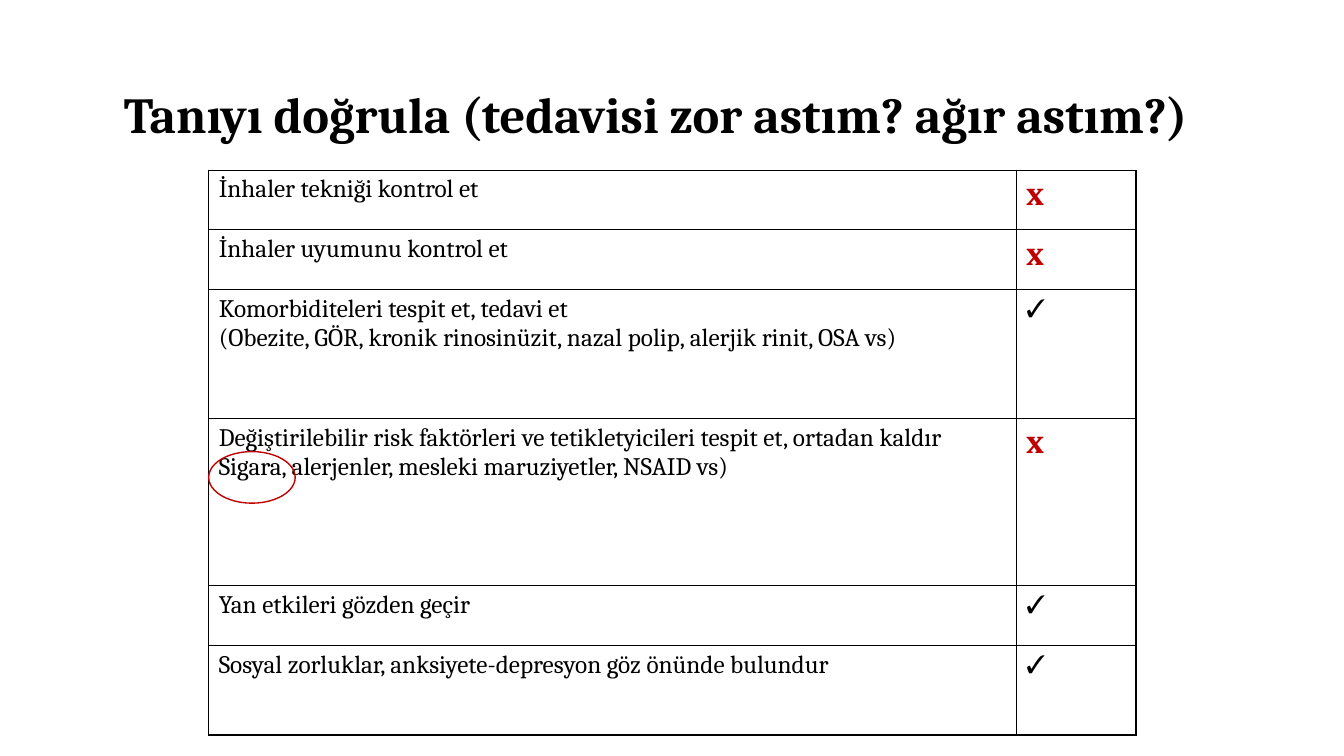
"""Builds the asthma diagnosis checklist slide."""
from dataclasses import dataclass

from lxml import etree
from pptx import Presentation
from pptx import util as u
from pptx.dml.color import RGBColor
from pptx.enum import shapes, text
from pptx.oxml import ns


@dataclass(frozen=True)
class Theme:
    font: str = "Cambria"
    ink: str = "000000"
    alert: str = "C00000"
    title_size: int = 36
    body_size: int = 18
    cross_size: int = 24
    line_width: int = 1


@dataclass(frozen=True)
class Check:
    task: str
    done: bool
    height: float


THEME = Theme()
COLUMN_WIDTHS = (20.35, 3.02)
CHECKS = (
    Check("İnhaler tekniği kontrol et", False, 1.5),
    Check("İnhaler uyumunu kontrol et", False, 1.5),
    Check("Komorbiditeleri tespit et, tedavi et\n"
          "(Obezite, GÖR, kronik rinosinüzit, nazal polip, alerjik rinit, OSA vs)", True, 3.25),
    Check("Değiştirilebilir risk faktörleri ve tetikletyicileri tespit et, ortadan kaldır\n"
          "Sigara, alerjenler, mesleki maruziyetler, NSAID vs)", False, 4.22),
    Check("Yan etkileri gözden geçir", True, 1.5),
    Check("Sosyal zorluklar, anksiyete-depresyon göz önünde bulundur", True, 2.26),
)


def write(frame, words: str, size: int, color: str, bold: bool = False) -> None:
    frame.text = words
    for para in frame.paragraphs:
        for span in para.runs:
            span.font.name = THEME.font
            span.font.size = u.Pt(size)
            span.font.bold = bold
            span.font.color.rgb = RGBColor.from_string(color)


def add_borders(cell) -> None:
    properties = cell._tc.get_or_add_tcPr()
    for index, side in enumerate("LRTB"):
        line = etree.Element(ns.qn(f"a:ln{side}"), w=str(u.Pt(THEME.line_width)))
        fill = etree.SubElement(line, ns.qn("a:solidFill"))
        etree.SubElement(fill, ns.qn("a:srgbClr"), val=THEME.ink)
        properties.insert(index, line)


def add_title(page) -> None:
    title = page.shapes.title
    title.left, title.top = u.Cm(2.87), u.Cm(1.02)
    title.width, title.height = u.Cm(28.68), u.Cm(3.68)
    frame = title.text_frame
    write(frame, "Tanıyı doğrula (tedavisi zor astım? ağır astım?)",
          THEME.title_size, THEME.ink, bold=True)
    frame.auto_size = text.MSO_AUTO_SIZE.NONE
    frame.vertical_anchor = text.MSO_ANCHOR.MIDDLE
    frame.paragraphs[0].alignment = text.PP_ALIGN.LEFT


def add_checklist(page) -> None:
    table = page.shapes.add_table(
        len(CHECKS), len(COLUMN_WIDTHS), u.Cm(5.26), u.Cm(4.29),
        u.Cm(sum(COLUMN_WIDTHS)), u.Cm(sum(check.height for check in CHECKS))).table
    table.first_row = table.horz_banding = False
    for column, width in zip(table.columns, COLUMN_WIDTHS):
        column.width = u.Cm(width)
    for row, check in zip(table.rows, CHECKS):
        row.height = u.Cm(check.height)
        task, mark = row.cells
        write(task.text_frame, check.task, THEME.body_size, THEME.ink)
        if check.done:
            write(mark.text_frame, "✓", THEME.body_size, THEME.ink)
        else:
            write(mark.text_frame, "x", THEME.cross_size, THEME.alert, bold=True)
        for cell in row.cells:
            cell.fill.background()
            add_borders(cell)


def add_smoking_ring(page) -> None:
    ring = page.shapes.add_shape(
        shapes.MSO_SHAPE.OVAL, u.Cm(5.26), u.Cm(11.38), u.Cm(2.18), u.Cm(1.3))
    ring.shadow.inherit = False
    ring.fill.background()
    ring.line.color.rgb = RGBColor.from_string(THEME.alert)
    ring.line.width = u.Pt(THEME.line_width)


def main() -> None:
    deck = Presentation()
    deck.slide_width, deck.slide_height = u.Cm(33.87), u.Cm(19.05)
    page = deck.slides.add_slide(deck.slide_layouts[5])
    add_checklist(page)
    add_title(page)
    add_smoking_ring(page)
    deck.save("out.pptx")


if __name__ == "__main__":
    main()
